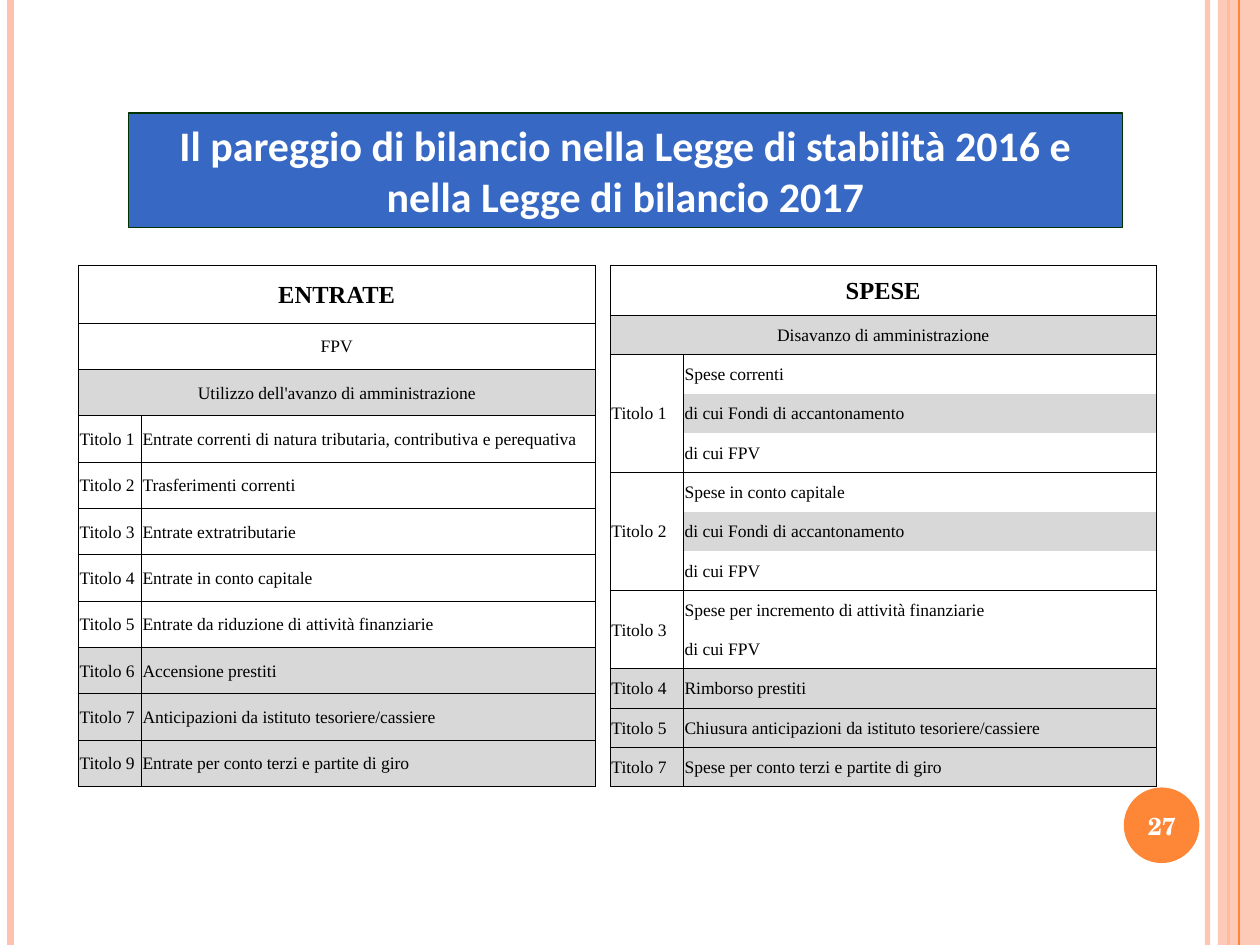
from lxml import etree
from pptx import Presentation
from pptx.dml.color import RGBColor
from pptx.enum.shapes import MSO_CONNECTOR, MSO_SHAPE
from pptx.enum.text import MSO_ANCHOR, MSO_AUTO_SIZE, PP_ALIGN
from pptx.oxml import parse_xml
from pptx.oxml.ns import nsdecls, qn
from pptx.util import Pt

ORANGE, PEACH, GREY, BLACK, WHITE = "FE8637", "FEC3AE", "D8D8D8", "000000", "FFFFFF"
NO_STYLE = "{2D5ABB26-0587-4C30-8999-92F81FD0307C}"
TABLE_TOP, TABLE_HEIGHT = 151.6, 298

# Each row: title label ("" continues the group, None spans the table), text, shaded
ENTRATE = [
    (None, "ENTRATE", False),
    (None, "FPV", False),
    (None, "Utilizzo dell'avanzo di amministrazione", True),
    ("Titolo 1", "Entrate correnti di natura tributaria, contributiva e perequativa", False),
    ("Titolo 2", "Trasferimenti correnti", False),
    ("Titolo 3", "Entrate extratributarie", False),
    ("Titolo 4", "Entrate in conto capitale", False),
    ("Titolo 5", "Entrate da riduzione di attività finanziarie", False),
    ("Titolo 6", "Accensione prestiti", True),
    ("Titolo 7", "Anticipazioni da istituto tesoriere/cassiere", True),
    ("Titolo 9", "Entrate per conto terzi e partite di giro", True),
]
SPESE = [
    (None, "SPESE", False),
    (None, "Disavanzo di amministrazione", True),
    ("Titolo 1", "Spese correnti", False),
    ("", "di cui Fondi di accantonamento", True),
    ("", "di cui FPV", False),
    ("Titolo 2", "Spese in conto capitale", False),
    ("", "di cui Fondi di accantonamento", True),
    ("", "di cui FPV", False),
    ("Titolo 3", "Spese per incremento di attività finanziarie", False),
    ("", "di cui FPV", False),
    ("Titolo 4", "Rimborso prestiti", True),
    ("Titolo 5", "Chiusura anticipazioni da istituto tesoriere/cassiere", True),
    ("Titolo 7", "Spese per conto terzi e partite di giro", True),
]


def rgb(value):
    """Return the colour for a hex string."""
    return RGBColor.from_string(value)


def set_alpha(fill_parent, percent):
    """Make the solid colour under an element partly transparent."""
    clr = fill_parent.find(".//" + qn("a:srgbClr"))
    etree.SubElement(clr, qn("a:alpha")).set("val", str(percent * 1000))


def write(tf, text, align, color, **font):
    """Write one formatted paragraph into a text frame."""
    p = tf.paragraphs[0]
    p.alignment = align
    r = p.add_run()
    r.text = text
    r.font.color.rgb = rgb(color)
    for name, value in font.items():
        setattr(r.font, name, value)


def add_stripe(s, x, color, width, alpha=100):
    """Draw a full-height vertical line."""
    c = s.shapes.add_connector(MSO_CONNECTOR.STRAIGHT, Pt(x), Pt(0), Pt(x), Pt(540))
    c.line.color.rgb, c.line.width = rgb(color), Pt(width)
    if alpha < 100:
        set_alpha(c.line._get_or_add_ln(), alpha)
    etree.SubElement(c._element.spPr, qn("a:effectLst"))


def add_block(s, kind, box, color, alpha=100):
    """Draw a filled shape without an outline."""
    sp = s.shapes.add_shape(kind, *map(Pt, box))
    sp.shadow.inherit = False
    sp.fill.solid()
    sp.fill.fore_color.rgb = rgb(color)
    sp.line.fill.background()
    if alpha < 100:
        set_alpha(sp._element.spPr, alpha)


def add_title(s, text):
    """Turn the title placeholder into a blue banner."""
    sp = s.shapes.title
    sp.left, sp.top, sp.width, sp.height = map(Pt, (73.4, 64.6, 568, 65.4))
    sp.fill.solid()
    sp.fill.fore_color.rgb = rgb("3668C4")
    sp.line.color.rgb, sp.line.width = rgb("003300"), Pt(0.75)
    tf = sp.text_frame
    for name, value in {"word_wrap": True, "auto_size": MSO_AUTO_SIZE.NONE,
                        "vertical_anchor": MSO_ANCHOR.MIDDLE}.items():
        setattr(tf, name, value)
    write(tf, text, PP_ALIGN.CENTER, WHITE, size=Pt(24), name="Calibri", bold=True)


def add_page_number(s, text):
    """Write the page number over its disc."""
    sp = s.shapes.add_textbox(*map(Pt, (640, 451.4, 48, 41)))
    tf = sp.text_frame
    tf.word_wrap, tf.vertical_anchor = True, MSO_ANCHOR.MIDDLE
    write(tf, text, PP_ALIGN.CENTER, WHITE, size=Pt(14), name="TeX Gyre Schola", bold=True)


def format_cell(cell, sides, shaded):
    """Set margins, borders on the given sides, and fill."""
    margins = {"margin_left": 0.75, "margin_top": 0.75, "margin_right": 0.75, "margin_bottom": 0}
    for name, value in margins.items():
        setattr(cell, name, Pt(value))
    cell.vertical_anchor = MSO_ANCHOR.MIDDLE
    tcPr = cell._tc.get_or_add_tcPr()
    for side in "LRTB":
        paint = f'<a:solidFill><a:srgbClr val="{BLACK}"/></a:solidFill>' if side in sides else "<a:noFill/>"
        tcPr.append(parse_xml(f'<a:ln{side} {nsdecls("a")} w="{Pt(0.5)}">{paint}</a:ln{side}>'))
    if shaded:
        cell.fill.solid()
        cell.fill.fore_color.rgb = rgb(GREY)
    else:
        cell.fill.background()


def add_budget_table(s, left, widths, head, rows):
    """Add a two-column table whose groups share one title cell."""
    n = len(rows)
    tbl = s.shapes.add_table(n, 2, Pt(left), Pt(TABLE_TOP), Pt(sum(widths)), Pt(TABLE_HEIGHT)).table
    tbl._tbl.tblPr.find(qn("a:tableStyleId")).text = NO_STYLE
    tbl.first_row = tbl.horz_banding = False
    for col, width in zip(tbl.columns, widths):
        col.width = Pt(width)
    start = 0
    for i, (label, text, shaded) in enumerate(rows):
        tbl.rows[i].height = Pt(head if i == 0 else (TABLE_HEIGHT - head) / (n - 1))
        first, second = tbl.cell(i, 0), tbl.cell(i, 1)
        last = i == n - 1 or rows[i + 1][0] != ""
        sides = "LR" + ("T" if label != "" else "") + ("B" if last else "")
        format_cell(first, sides if label == "" else "LRTB", shaded and label != "")
        format_cell(second, sides if label is not None else "RTB", shaded)
        font = {"size": Pt(10 if i else 14), "name": "Times New Roman", "bold": i == 0}
        if label is None:
            first.merge(second)
            write(first.text_frame, text, PP_ALIGN.CENTER, BLACK, **font)
            continue
        write(second.text_frame, text, PP_ALIGN.LEFT, BLACK, **font)
        if label:
            start = i
            write(first.text_frame, label, PP_ALIGN.LEFT, BLACK, **font)
        if last and i > start:
            tbl.cell(start, 0).merge(first)


def main():
    """Build and save the slide."""
    prs = Presentation()
    prs.slide_width, prs.slide_height = Pt(720), Pt(540)
    s = prs.slides.add_slide(prs.slide_layouts[5])
    add_stripe(s, 690, PEACH, 3, 93)
    add_stripe(s, 6, PEACH, 4.5)
    add_stripe(s, 702, ORANGE, 1.5)
    add_block(s, MSO_SHAPE.RECTANGLE, (696, 0, 24, 540), PEACH, 87)
    add_stripe(s, 708, ORANGE, 0.75)
    add_block(s, MSO_SHAPE.OVAL, (642.2, 450, 43.2, 43.2), ORANGE)
    add_title(s, "Il pareggio di bilancio nella Legge di stabilità 2016 e nella Legge di bilancio 2017")
    add_budget_table(s, 44.7, (36, 259.4), 33, ENTRATE)
    add_budget_table(s, 348.7, (41.8, 270.2), 28.5, SPESE)
    add_page_number(s, "27")
    prs.save("out.pptx")


if __name__ == "__main__":
    main()
